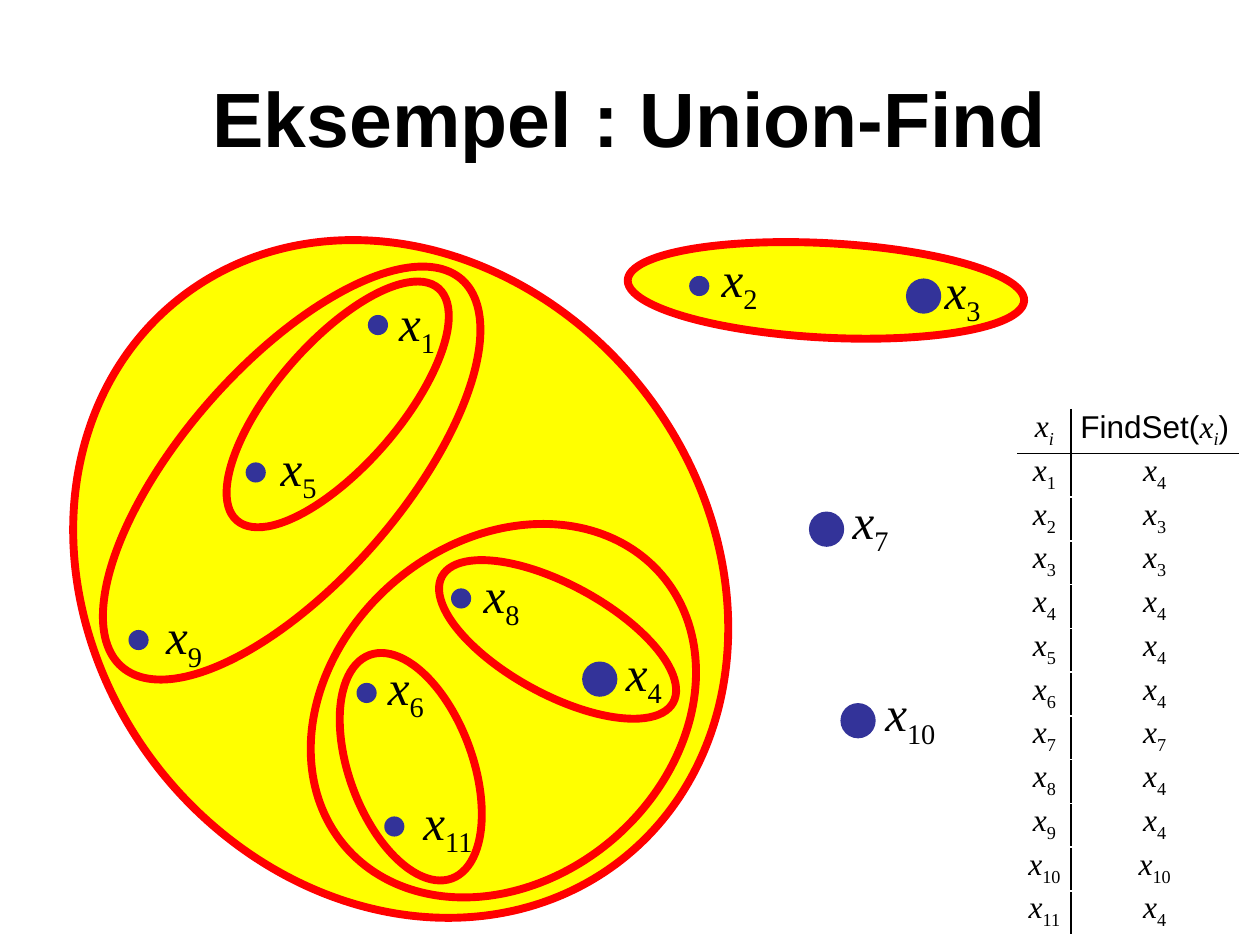
"""Build the Union-Find example slide with nested sets and a FindSet table."""
from lxml.etree import SubElement
from pptx import Presentation
from pptx.dml.color import RGBColor
from pptx.enum.shapes import MSO_SHAPE
from pptx.enum.text import MSO_ANCHOR, MSO_AUTO_SIZE, PP_ALIGN
from pptx.oxml.ns import qn
from pptx.util import Inches, Pt

COLORS = {"set": "FFFF00", "outline": "FF0000", "node": "333399", "ink": "000000"}
SANS, SERIF = "Arial", "Times New Roman"
NODE_SIZE, ROOT_SIZE = 0.16, 0.28

SETS = [
    (0.74, 1.76, 4.88, 5.67, 141.6),
    (0.27, 2.89, 4.09, 1.73, 311.3),
    (2.34, 4.3, 3.31, 2.68, 139.3),
    (2.19, 1.99, 0.98, 2.44, 41),
    (3.99, 4.03, 0.87, 2.09, 118.6),
    (2.77, 5.14, 0.98, 1.89, 339.8),
    (4.98, 1.93, 3.15, 0.75, 3),
]
ROOT_OF = {1: 4, 2: 3, 3: 3, 4: 4, 5: 4, 6: 4, 7: 7, 8: 4, 9: 4, 10: 10, 11: 4}
NODES = {
    1: ((2.92, 2.5), (3.02, 2.27)),
    2: ((5.47, 2.19), (5.58, 1.92)),
    3: ((7.19, 2.21), (7.35, 2.02)),
    4: ((4.62, 5.25), (4.82, 5.05)),
    5: ((1.95, 3.67), (2.08, 3.42)),
    6: ((2.83, 5.42), (2.93, 5.16)),
    7: ((6.42, 4.06), (6.62, 3.84)),
    8: ((3.58, 4.67), (3.69, 4.43)),
    9: ((1.02, 5), (1.17, 4.76)),
    10: ((6.67, 5.58), (6.85, 5.37)),
    11: ((3.05, 6.48), (3.18, 6.23)),
}


def color(name):
    return RGBColor.from_string(COLORS[name])


def write(paragraph, text, font=SERIF, size=18, bold=False, italic=False, subscript=False):
    """Append one formatted run to a centred paragraph."""
    paragraph.alignment = PP_ALIGN.CENTER
    run = paragraph.add_run()
    run.text = text
    run.font.name, run.font.size = font, Pt(size)
    run.font.bold, run.font.italic = bold, italic
    run.font.color.rgb = color("ink")
    if subscript:
        run.font._element.set("baseline", "-25000")


def write_variable(paragraph, index, size=18):
    write(paragraph, "x", size=size, italic=True)
    write(paragraph, str(index), size=size, italic=index == "i", subscript=True)


def add_frame(slide, left, top, width, height):
    frame = slide.shapes.add_textbox(*map(Inches, (left, top, width, height))).text_frame
    frame.word_wrap = True
    return frame


def add_ellipse(slide, left, top, width, height, fill, rotation=0, outline=None):
    ellipse = slide.shapes.add_shape(
        MSO_SHAPE.OVAL, *map(Inches, (left, top, width, height)))
    ellipse.rotation = rotation
    ellipse.shadow.inherit = False
    ellipse.fill.solid()
    ellipse.fill.fore_color.rgb = color(fill)
    if outline:
        ellipse.line.color.rgb = color(outline)
        ellipse.line.width = Pt(4.5)
    else:
        ellipse.line.fill.background()


def add_node(slide, index):
    dot, label = NODES[index]
    size = ROOT_SIZE if ROOT_OF[index] == index else NODE_SIZE
    add_ellipse(slide, *dot, size, size, "node")
    frame = add_frame(slide, *label, 0.58 if index < 10 else 0.75, 0.57)
    frame.auto_size = MSO_AUTO_SIZE.SHAPE_TO_FIT_TEXT
    write_variable(frame.paragraphs[0], index, size=28)


def style_cell(cell, sides):
    """Clear the fill and margins, and rule the given sides."""
    cell.margin_left = cell.margin_right = cell.margin_top = cell.margin_bottom = 0
    properties = cell._tc.get_or_add_tcPr()
    for side in sides:
        rule = SubElement(properties, qn(f"a:ln{side}"), w=str(Pt(1)))
        ink = SubElement(rule, qn("a:solidFill"))
        SubElement(ink, qn("a:srgbClr"), val=COLORS["ink"])
    cell.fill.background()


def add_find_table(slide):
    row_count = len(ROOT_OF) + 1
    table = slide.shapes.add_table(
        row_count, 2, *map(Inches, (8.08, 3.25, 1.75, 4.17))).table
    table.first_row = table.horz_banding = False
    table.columns[0].width, table.columns[1].width = Inches(0.42), Inches(1.33)
    for row in range(row_count):
        for column, side in enumerate("RL"):
            horizontal = {0: "B", 1: "T"}.get(row, "")
            style_cell(table.cell(row, column), side + horizontal)

    write_variable(table.cell(0, 0).text_frame.paragraphs[0], "i")
    heading = table.cell(0, 1).text_frame.paragraphs[0]
    write(heading, "FindSet(", font=SANS)
    write_variable(heading, "i")
    write(heading, ")", font=SANS)
    for row, pair in enumerate(ROOT_OF.items(), start=1):
        for column, index in enumerate(pair):
            write_variable(table.cell(row, column).text_frame.paragraphs[0], index)


def main():
    deck = Presentation()
    deck.slide_width, deck.slide_height = Inches(10), Inches(7.5)
    slide = deck.slides.add_slide(deck.slide_layouts[6])
    for left, top, width, height, rotation in SETS:
        add_ellipse(slide, left, top, width, height, "set", rotation, "outline")
    title = add_frame(slide, 0.5, 0.3, 9, 1.25)
    title.vertical_anchor = MSO_ANCHOR.MIDDLE
    write(title.paragraphs[0], "Eksempel : Union-Find", font=SANS, size=44, bold=True)
    for index in NODES:
        add_node(slide, index)
    add_find_table(slide)
    deck.save("out.pptx")


if __name__ == "__main__":
    main()
